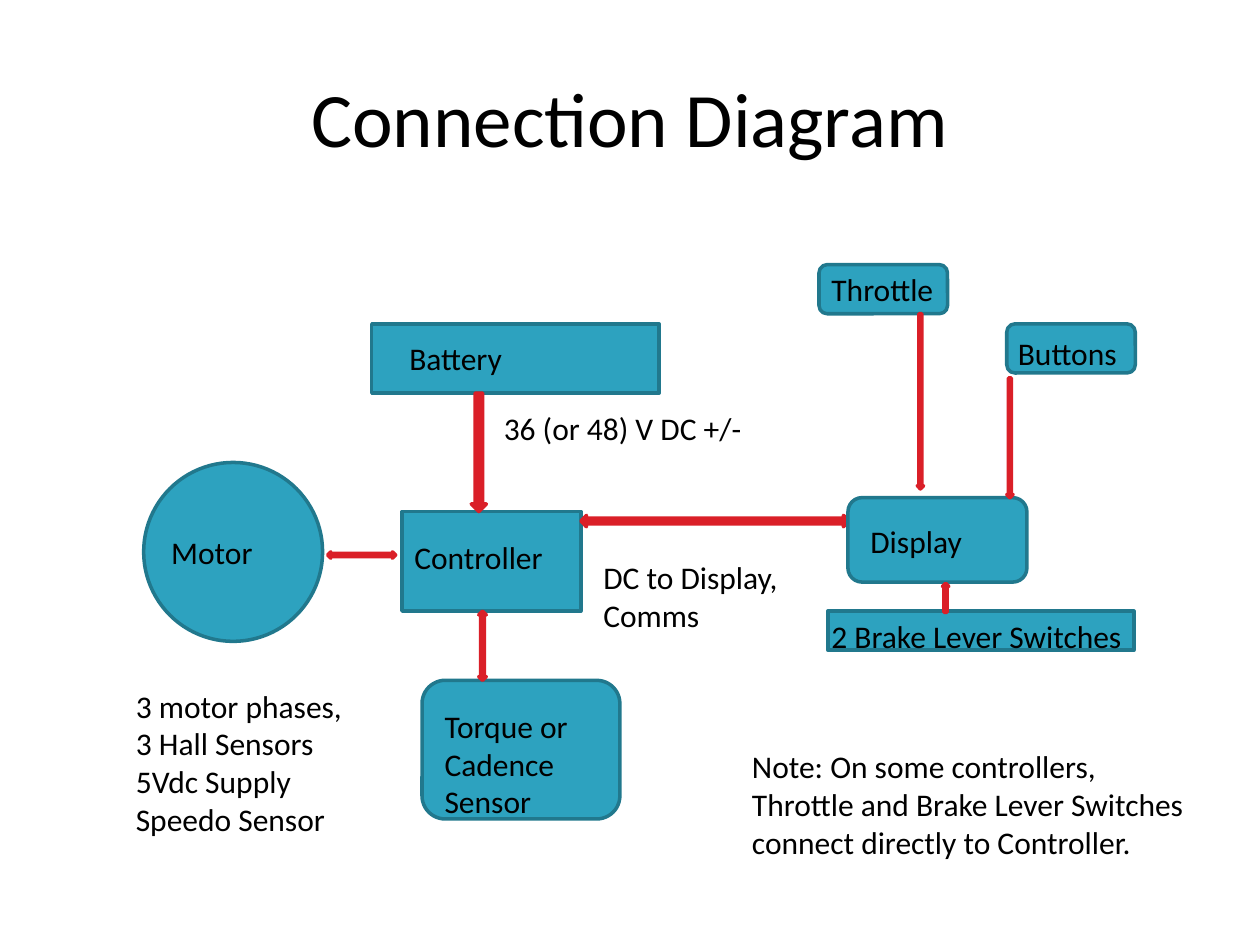
from dataclasses import dataclass

from pptx import Presentation
from pptx.dml.color import RGBColor
from pptx.enum.shapes import MSO_SHAPE
from pptx.enum.text import MSO_ANCHOR, PP_ALIGN
from pptx.util import Pt

PX = 9144  # EMU per px, 100 px to the inch
RECT, OVAL = MSO_SHAPE.RECTANGLE, MSO_SHAPE.OVAL
ROUND = MSO_SHAPE.ROUNDED_RECTANGLE
DOWN, UP = MSO_SHAPE.DOWN_ARROW, MSO_SHAPE.UP_ARROW
WIDE, TALL = MSO_SHAPE.LEFT_RIGHT_ARROW, MSO_SHAPE.UP_DOWN_ARROW
MIDDLE, TOP = MSO_ANCHOR.MIDDLE, MSO_ANCHOR.TOP
LEFT, CENTER = PP_ALIGN.LEFT, PP_ALIGN.CENTER


@dataclass(frozen=True)
class Theme:
    font: str = "Calibri"
    ink: RGBColor = RGBColor(0, 0, 0)
    fill: RGBColor = RGBColor(0x2D, 0xA2, 0xBF)
    edge: RGBColor = RGBColor(0x21, 0x78, 0x8D)
    red: RGBColor = RGBColor(0xDA, 0x1F, 0x28)
    head: int = 44
    body: int = 18
    line: int = 2


THEME = Theme()


def place(box, part):
    """Turn a part's px box, relative to its region, into slide EMU."""
    x, y, w, h = part
    return [n * PX for n in (box[0] + x, box[1] + y, w, h)]


def draw(slide, kind, box, part, fill, edge):
    shape = slide.shapes.add_shape(kind, *place(box, part))
    shape.shadow.inherit = False
    shape.fill.solid()
    shape.fill.fore_color.rgb = fill
    shape.line.color.rgb = edge
    shape.line.width = Pt(THEME.line)


def node(slide, kind, box, part):
    draw(slide, kind, box, part, THEME.fill, THEME.edge)


def arrow(slide, kind, box, part):
    draw(slide, kind, box, part, THEME.red, THEME.red)


def label(slide, box, part, *lines, size=THEME.body, align=LEFT, anchor=TOP):
    frame = slide.shapes.add_textbox(*place(box, part)).text_frame
    frame.word_wrap = True
    frame.vertical_anchor = anchor
    for i, line in enumerate(lines):
        para = frame.add_paragraph() if i else frame.paragraphs[0]
        para.alignment = align
        run = para.add_run()
        run.text = line
        run.font.name = THEME.font
        run.font.size = Pt(size)
        run.font.color.rgb = THEME.ink


def title(slide, box):
    label(slide, box, (0, 0, *box[2:]), "Connection Diagram",
          size=THEME.head, align=CENTER, anchor=MIDDLE)


def motor(slide, box):
    node(slide, OVAL, box, (16, 0, 142, 142))
    label(slide, box, (28, 51, 118, 40), "Motor")
    arrow(slide, WIDE, box, (162, 71, 54, 5))
    label(slide, box, (0, 173, 220, 131), "3 motor phases,",
          "3 Hall Sensors", "5Vdc Supply", "Speedo Sensor")


def power(slide, box):
    # Battery
    node(slide, RECT, box, (0, 0, 228, 55))
    label(slide, box, (20, 7, 189, 40), "Battery")
    # Controller
    node(slide, RECT, box, (24, 149, 142, 79))
    label(slide, box, (24, 165, 134, 40), "Controller")
    arrow(slide, DOWN, box, (79, 55, 12, 94))
    label(slide, box, (95, 63, 244, 40), "36 (or 48) V DC +/-")
    # Link to the display
    arrow(slide, WIDE, box, (166, 152, 213, 9))
    label(slide, box, (174, 181, 205, 71), "DC to Display, Comms")
    # Pedal sensor
    node(slide, ROUND, box, (40, 283, 157, 110))
    label(slide, box, (48, 299, 142, 101), "Torque or Cadence Sensor")
    arrow(slide, TALL, box, (85, 228, 6, 55))


def display(slide, box):
    # Inputs above
    node(slide, ROUND, box, (0, 1, 102, 39))
    label(slide, box, (0, 0, 102, 40), "Throttle")
    node(slide, ROUND, box, (149, 48, 102, 39))
    label(slide, box, (148, 51, 102, 40), "Buttons")
    # Display
    node(slide, ROUND, box, (23, 186, 142, 67))
    label(slide, box, (31, 200, 134, 40), "Display")
    # Brake switches below
    node(slide, RECT, box, (7, 276, 243, 31))
    label(slide, box, (0, 276, 283, 40), "2 Brake Lever Switches")
    # Signals into the display
    arrow(slide, DOWN, box, (78, 40, 5, 139))
    arrow(slide, DOWN, box, (149, 91, 5, 95))
    arrow(slide, UP, box, (98, 254, 5, 23))


def note(slide, box):
    label(slide, box, (0, 0, *box[2:]),
          "Note: On some controllers, Throttle and Brake Lever Switches "
          "connect directly to Controller.")


def main():
    deck = Presentation()
    deck.slide_width, deck.slide_height = 1000 * PX, 750 * PX
    slide = deck.slides.add_slide(deck.slide_layouts[6])
    title(slide, (50, 30, 900, 125))
    motor(slide, (98, 367, 220, 304))
    power(slide, (295, 257, 379, 400))
    display(slide, (650, 209, 283, 316))
    note(slide, (587, 588, 370, 101))
    deck.save("out.pptx")


if __name__ == "__main__":
    main()
